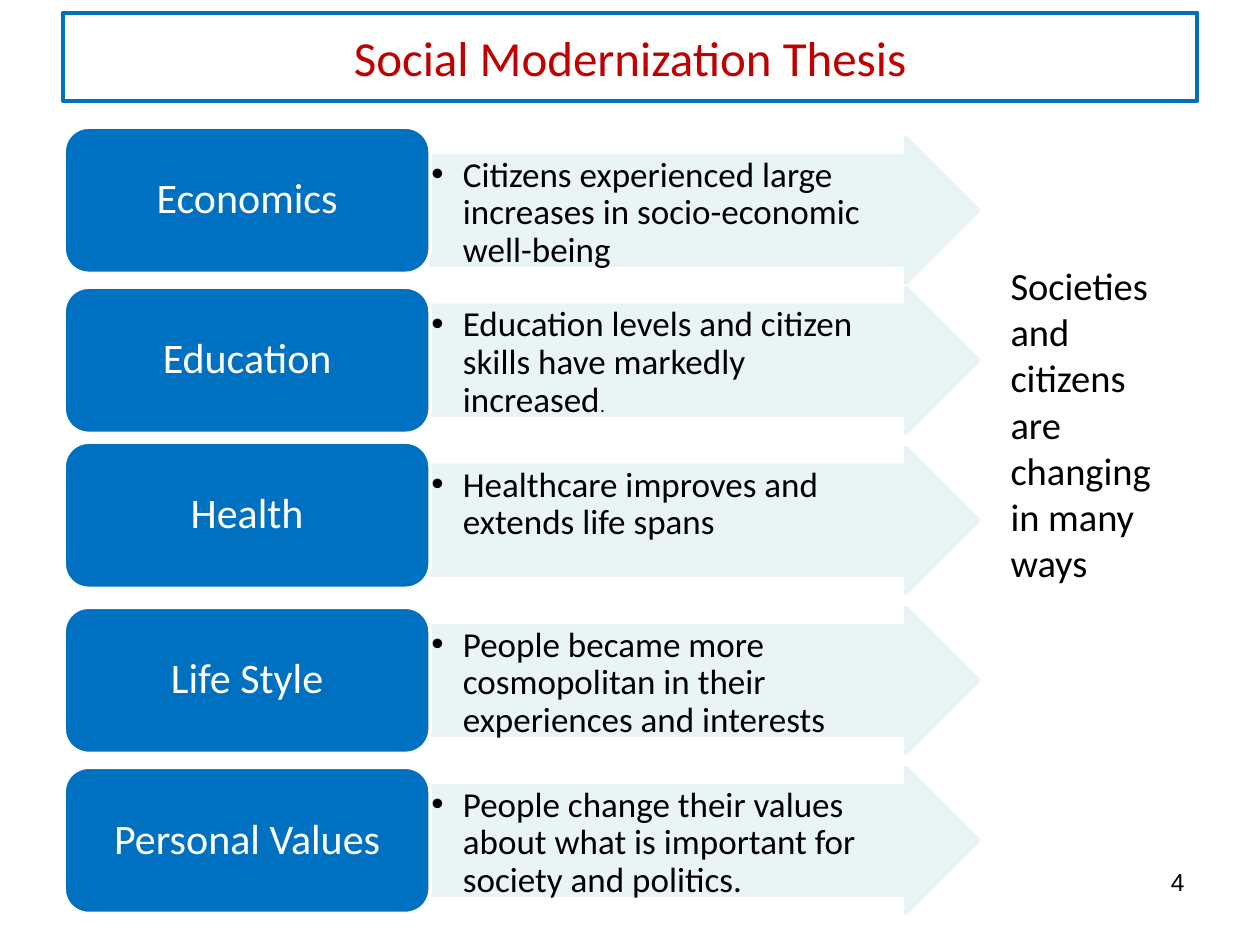
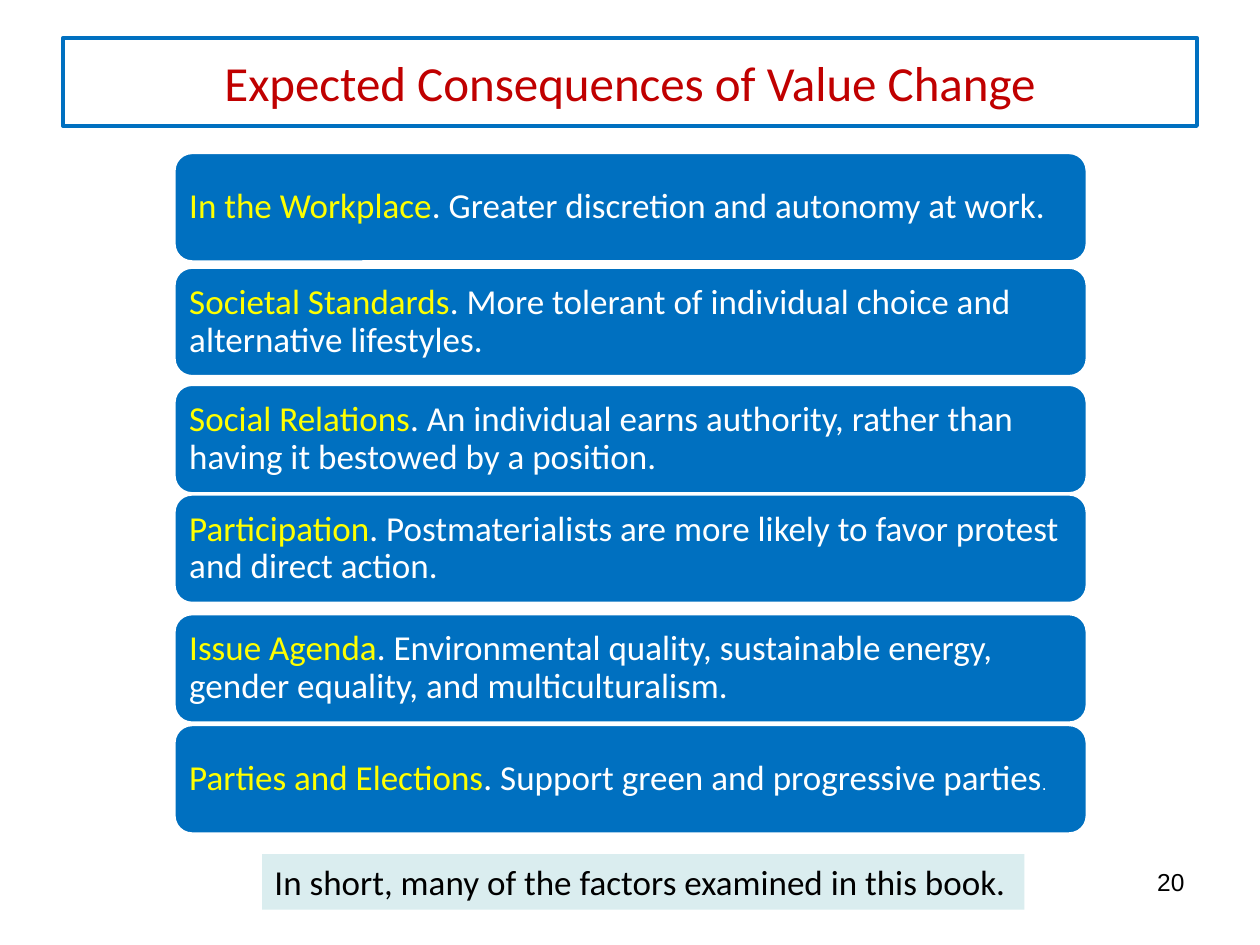
import pptx
import pptx.util
import pptx.dml.color
import pptx.enum.shapes
import pptx.enum.text
import pptx.oxml
import pptx.oxml.ns
import lxml.etree

COLS, ROWS = 100, 75
BLUE, RED, WHITE, BLACK, YELLOW = "0070C0", "C00000", "FFFFFF", "000000", "FFFF00"
PALE, MINT = "E7F3F4", "DAEDEF"
SHAPES = pptx.enum.shapes.MSO_SHAPE
ALIGN = pptx.enum.text.PP_ALIGN
ANCHOR = pptx.enum.text.MSO_ANCHOR

prs = pptx.Presentation()
prs.slide_width = pptx.util.Inches(10)
prs.slide_height = pptx.util.Inches(7.5)


def rgb(color):
    return pptx.dml.color.RGBColor.from_string(color)


def emu(box):
    cell_w, cell_h = prs.slide_width / COLS, prs.slide_height / ROWS
    return [round(n * cell) for n, cell in zip(box, (cell_w, cell_h) * 2)]


def place(sp, box):
    sp.left, sp.top, sp.width, sp.height = emu(box)


def add_element(parent, tag, **attrs):
    return lxml.etree.SubElement(parent, pptx.oxml.ns.qn(tag), attrs)


def write(sp, *runs, size=20, color=BLACK, font="Calibri", align=ALIGN.LEFT,
          anchor=ANCHOR.TOP, insets=(0.1, 0.05, 0.1, 0.05), spacing=1.0, bullet=None):
    tf = sp.text_frame
    tf.word_wrap = True
    tf.auto_size = pptx.enum.text.MSO_AUTO_SIZE.NONE
    tf.vertical_anchor = anchor
    tf.margin_left, tf.margin_top, tf.margin_right, tf.margin_bottom = map(
        pptx.util.Inches, insets)
    p = tf.paragraphs[0]
    pPr = p._p.get_or_add_pPr()
    indent = pptx.util.Inches(0.25) if bullet else 0
    pPr.set("marL", str(indent))
    pPr.set("indent", str(-indent))
    if bullet:
        add_element(pPr, "a:buFont", typeface="Arial")
        add_element(pPr, "a:buChar", char=bullet)
    else:
        add_element(pPr, "a:buNone")
    p.alignment = align
    p.line_spacing = spacing
    p.space_before = pptx.util.Pt(0)
    for text, changes in runs:
        look = {"size": size, "color": color, "font": font, **changes}
        r = p.add_run()
        r.text = text
        r.font.size = pptx.util.Pt(look["size"])
        r.font.name = look["font"]
        r.font.color.rgb = rgb(look["color"])


def add_block(s, kind, box, fill, line=None, opacity=None):
    sp = s.shapes.add_shape(kind, *emu(box))
    sp.shadow.inherit = False
    sp.fill.solid()
    sp.fill.fore_color.rgb = rgb(fill)
    if line:
        sp.line.color.rgb = rgb(line)
        sp.line.width = pptx.util.Pt(2)
    else:
        sp.line.fill.background()
    if opacity:
        for clr in sp._element.spPr.iter(pptx.oxml.ns.qn("a:srgbClr")):
            add_element(clr, "a:alpha", val=str(opacity * 1000))
    return sp


def add_slide(layout, title, top, number):
    s = prs.slides.add_slide(prs.slide_layouts[layout])
    sp = s.shapes.title
    place(sp, (5, top, 90, 7))
    sp.line.color.rgb = rgb(BLUE)
    sp.line.width = pptx.util.Pt(2.25)
    write(sp, (title, {}), size=28, color=RED, align=ALIGN.CENTER, anchor=ANCHOR.MIDDLE)
    sp = s.shapes.add_textbox(*emu((71.7, 68.3, 23.3, 5.2)))
    write(sp, (number, {}), size=14, font="Arial", align=ALIGN.RIGHT)
    return s


def add_trend(s, box, label, runs, label_shift, arrow_shift):
    x, y, w, h = box
    label_w = 0.4 * w
    sp = add_block(s, SHAPES.RIGHT_ARROW, (x + label_w, y + arrow_shift, w - label_w, h),
                   PALE, PALE, opacity=90)
    sp.adjustments[0], sp.adjustments[1] = 0.75, 0.5
    write(sp, *runs, insets=(0.01, 0.01, 0.3, 0.01), spacing=0.9, bullet="•")
    sp = add_block(s, SHAPES.ROUNDED_RECTANGLE, (x, y + label_shift, label_w, h), BLUE, WHITE)
    write(sp, (label, {}), size=24, color=WHITE, align=ALIGN.CENTER,
          anchor=ANCHOR.MIDDLE, spacing=0.9)


def add_trends(s, box, trends):
    x, y, w, h = box
    pitch = 12.7
    for i, (label, runs, label_shift, arrow_shift) in enumerate(trends):
        row = (x, y + i * pitch, w, h - pitch * (len(trends) - 1))
        add_trend(s, row, label, runs, label_shift, arrow_shift)


def add_conclusion(s, box, text):
    sp = s.placeholders[1]
    place(sp, box)
    write(sp, (text, {}), size=22)


def add_consequences(s, box, consequences):
    x, y, w, h = box
    for offset, topic, *rest in consequences:
        sp = add_block(s, SHAPES.ROUNDED_RECTANGLE, (x, y + offset, w, h), BLUE, WHITE)
        write(sp, (topic, {"color": YELLOW}), *rest, color=WHITE,
              anchor=ANCHOR.MIDDLE, insets=(0.08,) * 4, spacing=0.9)


def add_summary(s, box, text):
    write(add_block(s, SHAPES.RECTANGLE, box, MINT), (text, {}))


def main():
    s = add_slide(1, "Social Modernization Thesis", 1, "4")
    add_conclusion(s, (79.2, 20.3, 15.8, 38.8),
                   "Societies and citizens are changing in many ways")
    add_trends(s, (5.1, 10.1, 72.6, 62.4), [
        ("Economics",
         [("Citizens experienced large increases in socio-economic well-being", {})], 0, 0.8),
        ("Education",
         [("Education levels and citizen skills have markedly increased", {}),
          (".", {"size": 11, "font": "Arial"})], 0, 0),
        ("Health", [("Healthcare improves and extends life spans", {})], -0.4, 0),
        ("Life Style",
         [("People became more cosmopolitan in their experiences and interests", {})], 0, 0),
        ("Personal Values",
         [("People change their values about what is important for society and politics.", {})],
         0, 0),
    ])

    s = add_slide(5, "Expected Consequences of Value Change", 3, "20")
    add_consequences(s, (13.8, 12.1, 72.5, 8.7), [
        (0, "In the Workplace", (". Greater discretion and autonomy at work.", {})),
        (9.1, "Societal Standards",
         (". More tolerant of individual choice and alternative lifestyles.", {})),
        (18.4, "Social Relations",
         (". An individual earns authority, rather than having it bestowed by a position.", {})),
        (27.1, "Participation",
         (". Postmaterialists are more likely to favor protest and direct action.", {})),
        (36.6, "Issue Agenda",
         (". Environmental quality, sustainable energy, gender equality, and multiculturalism.",
          {})),
        (45.4, "Parties and Elections", (". Support green and progressive parties", {}),
         (".", {"size": 10, "font": "Arial"})),
    ])
    add_summary(s, (20.8, 67.8, 60.5, 4.4),
                "In short, many of the factors examined in this book.")
    prs.save("out.pptx")


if __name__ == "__main__":
    main()
